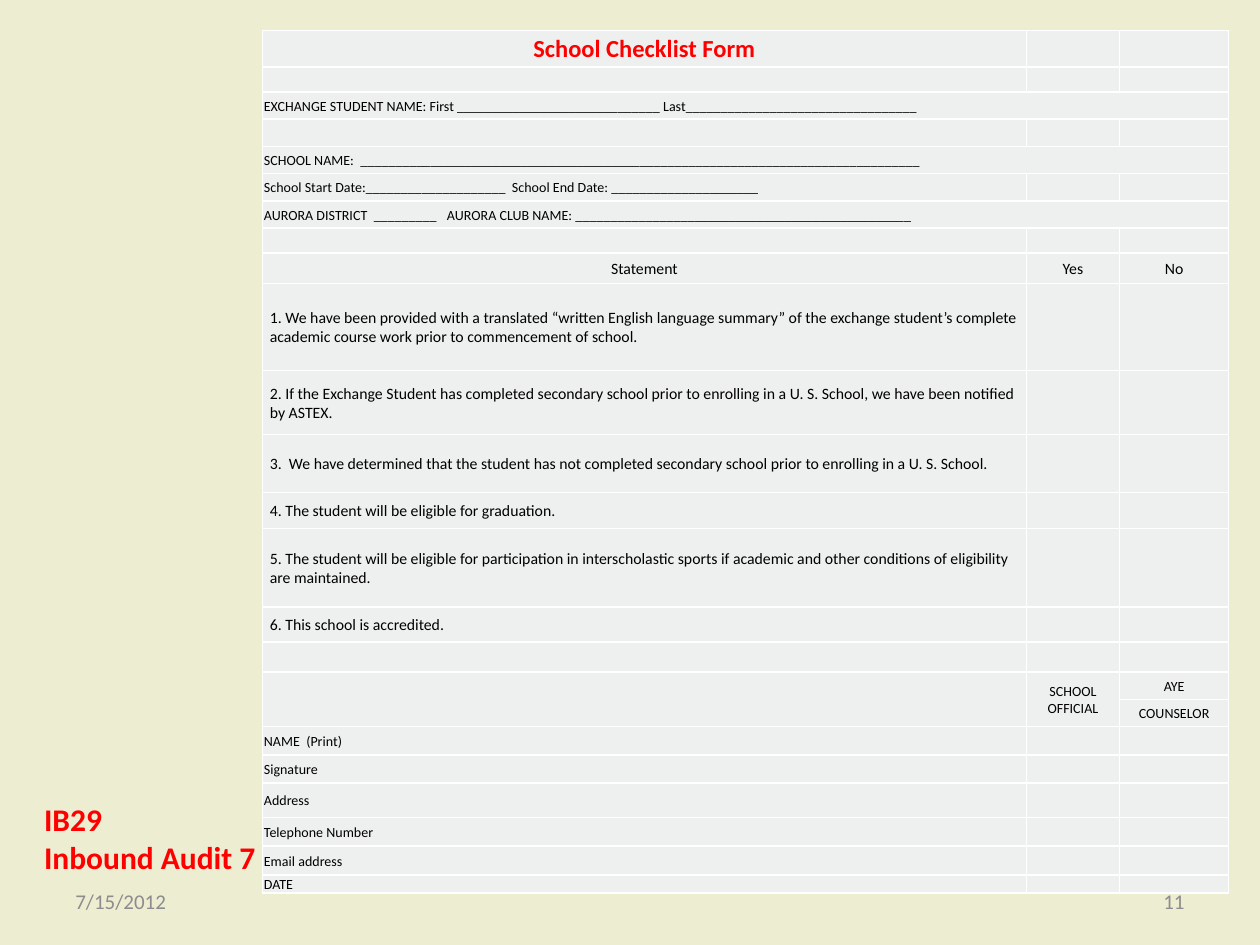
from dataclasses import dataclass

from lxml.etree import SubElement
from pptx import Presentation
from pptx.dml.color import RGBColor
from pptx.enum.text import MSO_ANCHOR, PP_ALIGN
from pptx.oxml.ns import qn
from pptx.util import Cm, Pt


@dataclass(frozen=True)
class Theme:
    font: str = "Calibri"
    background: str = "ECEDD1"
    cell: str = "EEF0EF"
    border: str = "FFFFFF"
    ink: str = "000000"
    accent: str = "FF0000"
    muted: str = "8C8C8C"
    label_size: int = 18
    title_size: int = 14
    footer_size: int = 12
    statement_size: int = 9
    field_size: int = 8
    empty_size: int = 6


THEME = Theme()


@dataclass(frozen=True)
class Row:
    height: float
    texts: tuple = ()
    size: int = THEME.field_size
    color: str = THEME.ink
    bold: bool = False
    indent: float = 0.03
    centered: bool = False
    full_width: bool = False


def statement(height, text):
    return Row(height, (text,), size=THEME.statement_size, indent=0.15)


def field(height, text, full_width=False):
    return Row(height, (text,), full_width=full_width)


def blank(count):
    return "_" * count


COLUMN_WIDTHS = (15.4, 1.88, 2.2)
SIGNATURE_ROW = 16
CLUB_TAB = 3.69

ROWS = (
    Row(0.74, ("School Checklist Form",), size=THEME.title_size,
        color=THEME.accent, bold=True, centered=True),
    Row(0.5),
    field(0.55, f"EXCHANGE STUDENT NAME: First {blank(29)} Last{blank(33)}", True),
    Row(0.55),
    field(0.55, f"SCHOOL NAME:  {blank(80)}", True),
    field(0.55, f"School Start Date:{blank(20)}  School End Date: {blank(21)}"),
    field(0.55, f"AURORA DISTRICT  {blank(9)}\tAURORA CLUB NAME: {blank(48)}", True),
    Row(0.5),
    Row(0.61, ("Statement", "Yes", "No"), size=THEME.statement_size, centered=True),
    statement(1.76, "1. We have been provided with a translated “written English language "
                    "summary” of the exchange student’s complete academic course work "
                    "prior to commencement of school."),
    statement(1.29, "2. If the Exchange Student has completed secondary school prior to "
                    "enrolling in a U. S. School, we have been notified by ASTEX."),
    statement(1.17, "3.  We have determined that the student has not completed secondary "
                    "school prior to enrolling in a U. S. School."),
    statement(0.72, "4. The student will be eligible for graduation."),
    statement(1.59, "5. The student will be eligible for participation in interscholastic "
                    "sports if academic and other conditions of eligibility are maintained."),
    statement(0.7, "6. This school is accredited."),
    Row(0.61),
    Row(0.55, ("", "SCHOOL OFFICIAL", "AYE"), centered=True),
    Row(0.55, ("", "", "COUNSELOR"), centered=True),
    field(0.57, "NAME  (Print)"),
    field(0.57, "Signature"),
    field(0.69, "Address"),
    field(0.58, "Telephone Number"),
    field(0.58, "Email address"),
    field(0.34, "DATE"),
)


def format_runs(paragraph, size, color, bold=False):
    for run in paragraph.runs:
        run.font.name = THEME.font
        run.font.size = Pt(size)
        run.font.bold = bold
        run.font.color.rgb = RGBColor.from_string(color)


def add_text(slide, box, text, size, color, bold=False,
             alignment=PP_ALIGN.LEFT, anchor=MSO_ANCHOR.TOP):
    shape = slide.shapes.add_textbox(*map(Cm, box))
    text_frame = shape.text_frame
    text_frame.word_wrap = True
    text_frame.vertical_anchor = anchor
    text_frame.text = text
    for paragraph in text_frame.paragraphs:
        paragraph.alignment = alignment
        format_runs(paragraph, size, color, bold)


def add_borders(cell):
    properties = cell._tc.get_or_add_tcPr()
    for side in ("a:lnL", "a:lnR", "a:lnT", "a:lnB"):
        line = SubElement(properties, qn(side), w=str(Pt(1)))
        fill = SubElement(line, qn("a:solidFill"))
        SubElement(fill, qn("a:srgbClr"), val=THEME.border)


def add_tab_stop(paragraph, position):
    tabs = SubElement(paragraph._p.get_or_add_pPr(), qn("a:tabLst"))
    SubElement(tabs, qn("a:tab"), pos=str(Cm(position)), algn="l")


def fill_cell(cell, row, text):
    add_borders(cell)
    cell.fill.solid()
    cell.fill.fore_color.rgb = RGBColor.from_string(THEME.cell)
    cell.vertical_anchor = MSO_ANCHOR.MIDDLE
    cell.margin_left = Cm(row.indent)
    cell.margin_right = cell.margin_top = Cm(0.03)
    cell.margin_bottom = 0
    paragraph = cell.text_frame.paragraphs[0]
    if not text:
        SubElement(paragraph._p, qn("a:endParaRPr"), sz=str(THEME.empty_size * 100))
        return
    paragraph.text = text
    paragraph.alignment = PP_ALIGN.CENTER if row.centered else PP_ALIGN.LEFT
    format_runs(paragraph, row.size, row.color, row.bold)
    if "\t" in text:
        add_tab_stop(paragraph, CLUB_TAB)


def add_checklist(slide):
    box = (5.29, 0.61, sum(COLUMN_WIDTHS), sum(row.height for row in ROWS))
    table = slide.shapes.add_table(len(ROWS), len(COLUMN_WIDTHS), *map(Cm, box)).table
    table.first_row = table.horz_banding = False
    for column, width in zip(table.columns, COLUMN_WIDTHS):
        column.width = Cm(width)
    for index, row in enumerate(ROWS):
        table.rows[index].height = Cm(row.height)
        for column in range(len(COLUMN_WIDTHS)):
            text = row.texts[column] if column < len(row.texts) else ""
            fill_cell(table.cell(index, column), row, text)
        if row.full_width:
            table.cell(index, 0).merge(table.cell(index, len(COLUMN_WIDTHS) - 1))
    for column in (0, 1):
        table.cell(SIGNATURE_ROW, column).merge(table.cell(SIGNATURE_ROW + 1, column))


def main():
    presentation = Presentation()
    presentation.slide_width = Cm(25.4)
    presentation.slide_height = Cm(19.05)
    slide = presentation.slides.add_slide(presentation.slide_layouts[6])
    slide.background.fill.solid()
    slide.background.fill.fore_color.rgb = RGBColor.from_string(THEME.background)

    add_text(slide, (1.27, 17.66, 5.93, 1.01), "7/15/2012", THEME.footer_size,
             THEME.muted, anchor=MSO_ANCHOR.MIDDLE)
    add_text(slide, (18.2, 17.66, 5.93, 1.01), "11", THEME.footer_size,
             THEME.muted, alignment=PP_ALIGN.RIGHT, anchor=MSO_ANCHOR.MIDDLE)
    add_text(slide, (0.64, 16, 5.29, 1.8), "IB29\nInbound Audit 7",
             THEME.label_size, THEME.accent, bold=True)
    add_checklist(slide)
    presentation.save("out.pptx")


if __name__ == "__main__":
    main()
